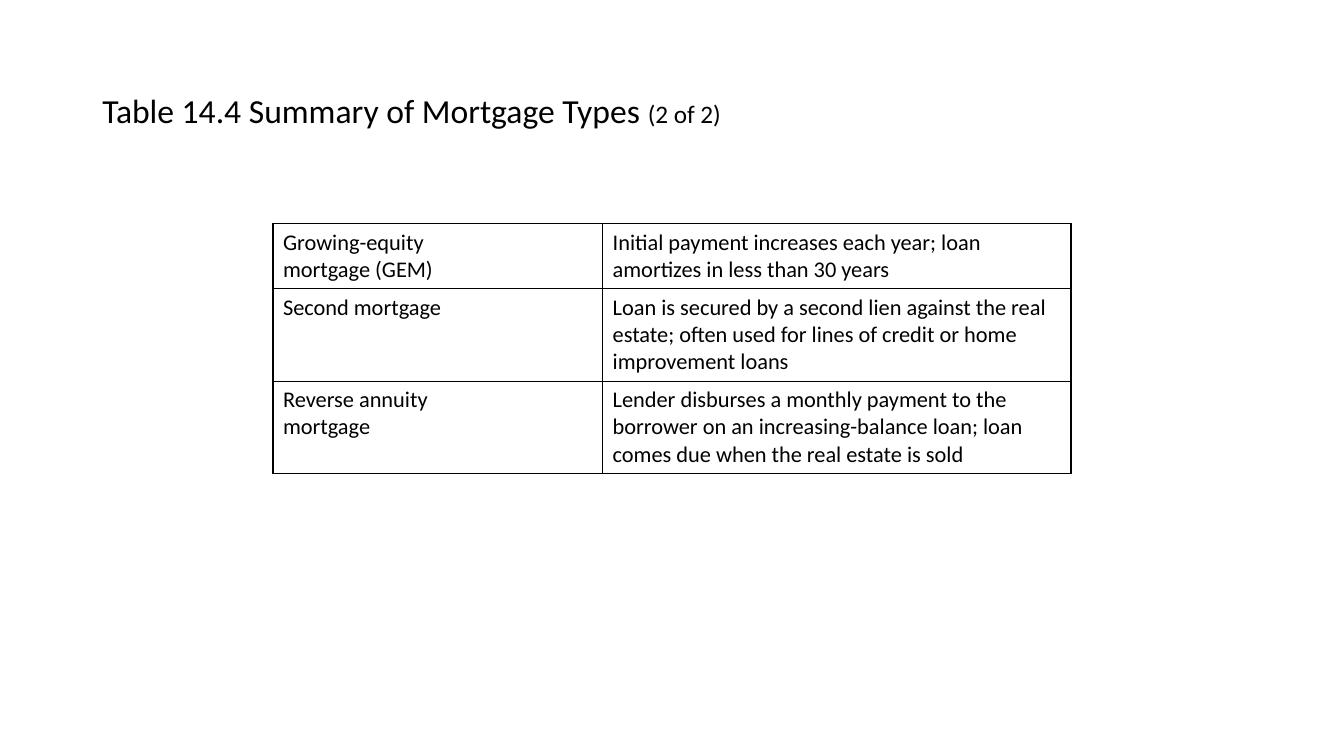
from lxml.etree import SubElement
from pptx import Presentation
from pptx.dml.color import RGBColor
from pptx.enum.text import MSO_ANCHOR as Anchor
from pptx.oxml.ns import qn
from pptx.util import Pt

PX = 9525
FONT = "Calibri"
COLORS = {"text": "000000", "border": "000000", "paper": "FFFFFF"}
SLIDE_SIZE = (1280, 720)
TITLE_BOX = (88, 38, 1104, 139)
TABLE_BOX = (260, 213, 760, 238)
COLUMN_WIDTHS = (314, 446)
ROW_HEIGHTS = (62, 88, 88)

TITLE_RUNS = [("Table 14.4 Summary of Mortgage Types ", 24), ("(2 of 2)", 18)]
MORTGAGES = [
    (["Growing-equity", "mortgage (GEM)"],
     ["Initial payment increases each year; loan amortizes in less than 30 years"]),
    (["Second mortgage"],
     ["Loan is secured by a second lien against the real estate; "
      "often used for lines of credit or home improvement loans"]),
    (["Reverse annuity", "mortgage"],
     ["Lender disburses a monthly payment to the borrower on an "
      "increasing-balance loan; loan comes due when the real estate is sold"]),
]


def scaled(box):
    """Turn px lengths into EMU."""
    return [length * PX for length in box]


def add_run(paragraph, text, size):
    """Add one run in the slide's font."""
    run = paragraph.add_run()
    run.text = text
    run.font.name = FONT
    run.font.size = Pt(size)
    run.font.color.rgb = RGBColor.from_string(COLORS["text"])


def add_borders(cell, width):
    """Draw a solid line on all four sides of a cell."""
    properties = cell._tc.get_or_add_tcPr()
    for side in ("a:lnL", "a:lnR", "a:lnT", "a:lnB"):
        line = SubElement(properties, qn(side), w=str(Pt(width)))
        fill = SubElement(line, qn("a:solidFill"))
        SubElement(fill, qn("a:srgbClr"), val=COLORS["border"])


def add_title(slide, box):
    """Place the title with its smaller part number."""
    frame = slide.shapes.add_textbox(*scaled(box)).text_frame
    frame.word_wrap = True
    frame.vertical_anchor = Anchor.MIDDLE
    heading = frame.paragraphs[0]
    heading.line_spacing = 0.9
    for text, size in TITLE_RUNS:
        add_run(heading, text, size)


def fill_cell(cell, lines):
    """Write the lines of a cell and give it borders and a plain fill."""
    add_borders(cell, 1)
    cell.fill.solid()
    cell.fill.fore_color.rgb = RGBColor.from_string(COLORS["paper"])
    frame = cell.text_frame
    for index, line in enumerate(lines):
        paragraph = frame.add_paragraph() if index else frame.paragraphs[0]
        add_run(paragraph, line, 16)


def add_mortgage_table(slide, box):
    """Place the table of mortgage types and their descriptions."""
    table = slide.shapes.add_table(
        len(MORTGAGES), len(COLUMN_WIDTHS), *scaled(box)).table
    table.first_row = table.horz_banding = False
    for column, width in zip(table.columns, COLUMN_WIDTHS):
        column.width = width * PX
    for row, height, mortgage in zip(table.rows, ROW_HEIGHTS, MORTGAGES):
        row.height = height * PX
        for cell, lines in zip(row.cells, mortgage):
            fill_cell(cell, lines)


def main():
    """Build and save the slide."""
    deck = Presentation()
    deck.slide_width, deck.slide_height = scaled(SLIDE_SIZE)
    slide = deck.slides.add_slide(deck.slide_layouts[6])
    add_title(slide, TITLE_BOX)
    add_mortgage_table(slide, TABLE_BOX)
    deck.save("out.pptx")


if __name__ == "__main__":
    main()
